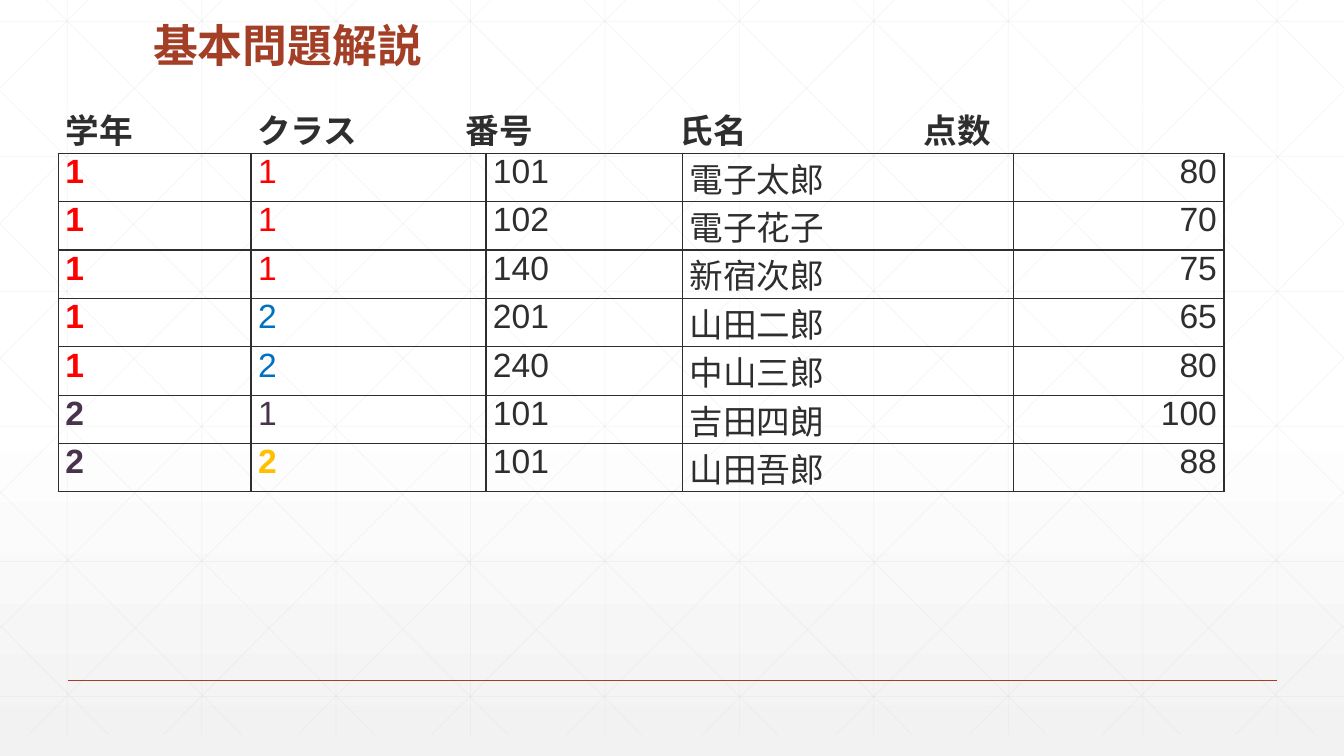
from dataclasses import dataclass

from lxml.etree import SubElement
from pptx import Presentation
from pptx.dml.color import RGBColor
from pptx.enum.shapes import MSO_CONNECTOR
from pptx.enum.text import MSO_ANCHOR, PP_ALIGN
from pptx.oxml.ns import qn
from pptx.slide import Slide
from pptx.table import Table, _Cell
from pptx.text.text import _Paragraph
from pptx.util import Inches, Pt

COLORS = {
    "white": "FFFFFF",
    "mist": "F2F2F2",
    "grid": "D9D9D9",
    "rust": "A43F27",
    "ink": "2D2E2D",
    "red": "FF0000",
    "blue": "0070C0",
    "purple": "49324C",
    "gold": "FFC000",
}
LATIN_FONT = "Arial"
JAPANESE_FONT = "Noto Sans CJK JP"
NO_TABLE_STYLE = "{2D5ABB26-0587-4C30-8999-92F81FD0307C}"

PAGE_WIDTH, PAGE_HEIGHT = 13.33, 7.5
GRID_TOP, GRID_BOTTOM = -0.21, 7.29
GRID_STEP = 4 / 3
DIAGONAL_SLOPE = 1.005

HEADINGS = ("学年", "クラス", "番号", "氏名", "点数")
HEADING_STOPS = (1.9, 3.97, 6.09, 8.51)
COLUMN_WIDTHS = (1.91, 2.33, 1.95, 3.28, 2.09)
COLUMN_ALIGNMENTS = (PP_ALIGN.LEFT, *[PP_ALIGN.JUSTIFY] * 3, PP_ALIGN.RIGHT)
ROW_HEIGHT = 0.48


@dataclass(frozen=True)
class Line:
    start_x: float
    start_y: float
    end_x: float
    end_y: float
    color: str = "grid"
    width: float = 0.5
    opacity: int = 25


@dataclass(frozen=True)
class Student:
    grade: str
    group: str
    number: str
    name: str
    score: str
    grade_color: str
    group_color: str
    group_bold: bool = False


STUDENTS = (
    Student("1", "1", "101", "電子太郎", "80", "red", "red"),
    Student("1", "1", "102", "電子花子", "70", "red", "red"),
    Student("1", "1", "140", "新宿次郎", "75", "red", "red"),
    Student("1", "2", "201", "山田二郎", "65", "red", "blue"),
    Student("1", "2", "240", "中山三郎", "80", "red", "blue"),
    Student("2", "1", "101", "吉田四朗", "100", "purple", "purple"),
    Student("2", "2", "101", "山田吾郎", "88", "purple", "gold", True),
)


def rgb(name: str) -> RGBColor:
    return RGBColor.from_string(COLORS[name])


def draw_line(page: Slide, line: Line) -> None:
    connector = page.shapes.add_connector(
        MSO_CONNECTOR.STRAIGHT,
        *(Inches(v) for v in (line.start_x, line.start_y, line.end_x, line.end_y)),
    )
    connector.line.color.rgb = rgb(line.color)
    connector.line.width = Pt(line.width)
    properties = connector._element.spPr
    if line.opacity < 100:
        color = properties.find(".//" + qn("a:srgbClr"))
        SubElement(color, qn("a:alpha"), val=str(line.opacity * 1000))
    SubElement(properties, qn("a:effectLst"))


def grid_lines() -> list[Line]:
    columns = [GRID_STEP * (i + 0.5) for i in range(10)]
    rows = [0.21 + 1.34 * i for i in range(6)]
    lines = [Line(x, GRID_TOP, x, GRID_BOTTOM) for x in columns]
    lines += [Line(0, y, PAGE_WIDTH, y) for y in rows]
    diagonals = []
    for i in range(10):
        x = 0.25 + GRID_STEP * i
        run = min((GRID_BOTTOM - GRID_TOP) / DIAGONAL_SLOPE, PAGE_WIDTH - x)
        diagonals.append(Line(x, GRID_TOP, x + run, GRID_TOP + run * DIAGONAL_SLOPE))
    for i in range(5):
        x = 1.08 + 1.32 * i
        diagonals.append(Line(x, GRID_BOTTOM, 0, GRID_BOTTOM - x * DIAGONAL_SLOPE))
    mirrored = [
        Line(PAGE_WIDTH - d.start_x, d.start_y, PAGE_WIDTH - d.end_x, d.end_y)
        for d in diagonals
    ]
    return lines + diagonals + mirrored


def style_paragraph(
    para: _Paragraph, size: float, color: str, bold: bool, latin: str = LATIN_FONT
) -> None:
    font = para.font
    font.size = Pt(size)
    font.bold = bold
    font.name = latin
    font.color.rgb = rgb(color)
    latin_element = font._element.find(qn("a:latin"))
    east_asian = SubElement(font._element, qn("a:ea"), typeface=JAPANESE_FONT)
    latin_element.addnext(east_asian)


def set_borders(cell: _Cell, **sides: str) -> None:
    properties = cell._tc.get_or_add_tcPr()
    borders = []
    for side in "LRTB":
        border = SubElement(properties, qn(f"a:ln{side}"), w=str(Pt(1)))
        if side in sides:
            fill = SubElement(border, qn("a:solidFill"))
            SubElement(fill, qn("a:srgbClr"), val=COLORS[sides[side]])
        else:
            SubElement(border, qn("a:noFill"))
        borders.append(border)
    for position, border in enumerate(borders):
        properties.insert(position, border)


def prepare_cell(cell: _Cell) -> None:
    cell.margin_left = cell.margin_right = Inches(0.07)
    cell.margin_top = cell.margin_bottom = 0
    cell.fill.background()


def fill_heading(table: Table) -> None:
    for column in range(len(HEADINGS)):
        cell = table.cell(0, column)
        prepare_cell(cell)
        set_borders(cell, T="white", B="ink")
    heading = table.cell(0, 0)
    heading.merge(table.cell(0, len(HEADINGS) - 1))
    para = heading.text_frame.paragraphs[0]
    para.text = "\t".join(HEADINGS)
    stops = SubElement(para._p.get_or_add_pPr(), qn("a:tabLst"))
    for stop in HEADING_STOPS:
        SubElement(stops, qn("a:tab"), pos=str(Inches(stop)), algn="l")
    style_paragraph(para, 24, "ink", True)


def fill_student(table: Table, row: int, student: Student) -> None:
    values = (student.grade, student.group, student.number, student.name, student.score)
    colors = (student.grade_color, student.group_color, "ink", "ink", "ink")
    weights = (True, student.group_bold, False, False, False)
    columns = zip(values, colors, weights, COLUMN_ALIGNMENTS)
    for column, (value, color, bold, alignment) in enumerate(columns):
        cell = table.cell(row, column)
        prepare_cell(cell)
        set_borders(cell, L="ink", R="ink", T="ink", B="ink")
        para = cell.text_frame.paragraphs[0]
        para.text = value
        para.alignment = alignment
        style_paragraph(para, 24, color, bold)


def add_score_table(page: Slide) -> None:
    row_count = len(STUDENTS) + 1
    frame = page.shapes.add_table(
        row_count, len(HEADINGS), Inches(0.58), Inches(1.04),
        Inches(sum(COLUMN_WIDTHS)), Inches(ROW_HEIGHT * row_count),
    )
    table = frame.table
    table.first_row = table.horz_banding = False
    table._tbl.tblPr.find(qn("a:tableStyleId")).text = NO_TABLE_STYLE
    for column, width in zip(table.columns, COLUMN_WIDTHS):
        column.width = Inches(width)
    fill_heading(table)
    for row, student in enumerate(STUDENTS, start=1):
        fill_student(table, row, student)


def add_title(page: Slide) -> None:
    box = page.shapes.add_textbox(Inches(1.42), Inches(-0.48), Inches(10.5), Inches(1.25))
    box.text_frame.word_wrap = True
    box.text_frame.vertical_anchor = MSO_ANCHOR.BOTTOM
    para = box.text_frame.paragraphs[0]
    para.text = "基本問題解説"
    para.line_spacing = 0.9
    style_paragraph(para, 32, "rust", True, JAPANESE_FONT)


def paint_background(page: Slide) -> None:
    fill = page.background.fill
    fill.gradient()
    fill.gradient_angle = 270
    for stop, position, color in zip(fill.gradient_stops, (0.53, 1), ("white", "mist")):
        stop.position = position
        stop.color.rgb = rgb(color)


def main() -> None:
    deck = Presentation()
    deck.slide_width, deck.slide_height = Inches(PAGE_WIDTH), Inches(PAGE_HEIGHT)
    page = deck.slides.add_slide(deck.slide_layouts[6])
    paint_background(page)
    for line in grid_lines():
        draw_line(page, line)
    draw_line(page, Line(0.67, 6.75, 12.67, 6.75, "rust", 1, 100))
    add_title(page)
    add_score_table(page)
    deck.save("out.pptx")


if __name__ == "__main__":
    main()
